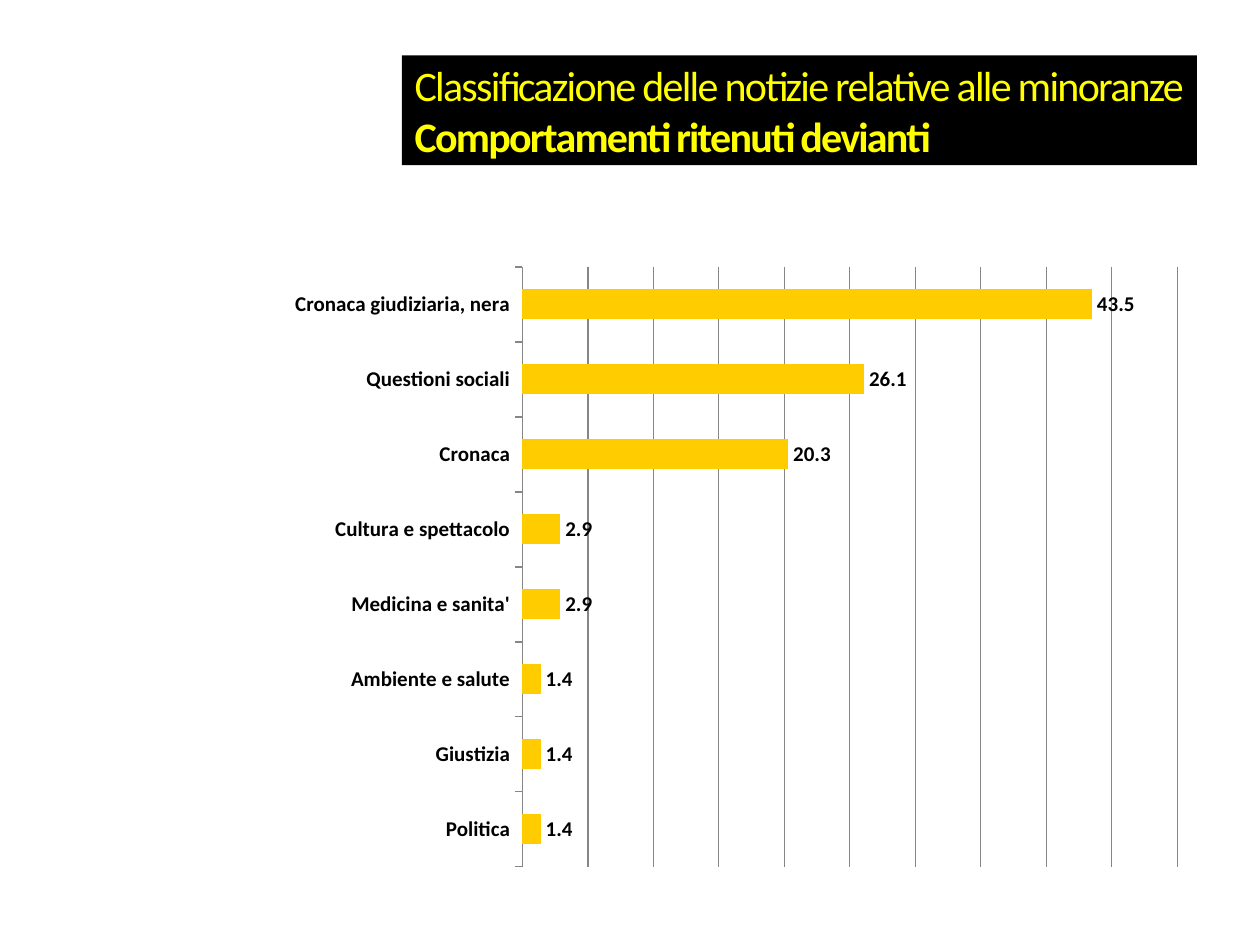
from lxml import etree
from pptx import Presentation
from pptx.chart.data import CategoryChartData
from pptx.dml.color import RGBColor
from pptx.enum.chart import XL_CHART_TYPE, XL_LABEL_POSITION, XL_TICK_LABEL_POSITION, XL_TICK_MARK
from pptx.enum.text import MSO_ANCHOR, PP_ALIGN
from pptx.oxml.ns import qn
from pptx.util import Inches, Pt

BAR = XL_CHART_TYPE.BAR_CLUSTERED
END = XL_LABEL_POSITION.OUTSIDE_END
LOW = XL_TICK_LABEL_POSITION.LOW
OUT, NONE = XL_TICK_MARK.OUTSIDE, XL_TICK_MARK.NONE
MIDDLE, LEFT = MSO_ANCHOR.MIDDLE, PP_ALIGN.LEFT


def color(code):
    return RGBColor.from_string(code)


class Deck:
    face = "Calibri"
    ink, gold, yellow, grid = "000000", "FFCC00", "FFFF00", "868686"

    def __init__(self):
        self.prs = Presentation()
        self.prs.slide_width, self.prs.slide_height = Inches(10), Inches(7.5)
        self.slide = self.prs.slides.add_slide(self.prs.slide_layouts[5])

    def font(self, font, size, code, bold=None):
        font.name, font.size, font.bold = self.face, Pt(size), bold
        font.color.rgb = color(code)

    def title(self, box, top, main):
        shape = self.slide.shapes.title
        shape.left, shape.top, shape.width, shape.height = map(Inches, box)
        shape.fill.solid()
        shape.fill.fore_color.rgb = color(self.ink)
        frame = shape.text_frame
        frame.word_wrap = True
        frame.vertical_anchor = MIDDLE
        frame.margin_right = Inches(0.05)
        para = frame.paragraphs[0]
        para.alignment = LEFT
        for text, bold in ((top, False), (main, True)):
            if para.runs:
                para.add_line_break()
            run = para.add_run()
            run.text = text
            run.font.bold = bold
            run.font._element.set("spc", "-100")
        self.font(para.font, 24, self.yellow)

    def place(self, chart, area):
        plot = chart._chartSpace.find(".//" + qn("c:plotArea"))
        old = plot.find(qn("c:layout"))
        if old is not None:
            plot.remove(old)
        layout = etree.Element(qn("c:layout"))
        plot.insert(0, layout)
        manual = etree.SubElement(layout, qn("c:manualLayout"))
        items = [("layoutTarget", "inner"), ("xMode", "edge"), ("yMode", "edge")]
        for tag, val in items + list(zip("xywh", area)):
            etree.SubElement(manual, qn("c:" + tag)).set("val", str(val))

    def bars(self, box, rows, area):
        data = CategoryChartData(number_format="0.0")
        data.categories = [name for name, _ in rows]
        data.add_series("Series 1", [val for _, val in rows])
        chart = self.slide.shapes.add_chart(BAR, *map(Inches, box), data).chart
        chart.has_legend = chart.has_title = False
        self.font(chart.font, 10, self.ink)
        self.place(chart, area)

        cats = chart.category_axis
        cats.reverse_order = True
        cats.major_tick_mark, cats.minor_tick_mark = OUT, NONE
        cats.tick_label_position = LOW
        self.font(cats.tick_labels.font, 12, self.ink, True)

        vals = chart.value_axis
        vals.visible = False
        vals.minimum_scale, vals.maximum_scale, vals.major_unit = 0, 50, 5
        vals.has_major_gridlines = True
        for line in (cats.format.line, vals.major_gridlines.format.line):
            line.color.rgb = color(self.grid)
            line.width = Pt(0.75)

        plot = chart.plots[0]
        plot.gap_width = 150
        plot.vary_by_categories = False
        fill = plot.series[0].format.fill
        fill.solid()
        fill.fore_color.rgb = color(self.gold)
        labels = plot.series[0].data_labels
        labels.show_value = True
        labels.number_format, labels.number_format_is_linked = "0.0", False
        labels.position = END
        self.font(labels.font, 12, self.ink, True)


def main():
    deck = Deck()
    deck.title((3.19, 0.44, 6.31, 0.87),
               "Classificazione delle notizie relative alle minoranze",
               "Comportamenti ritenuti devianti")
    rows = [
        ("Cronaca giudiziaria, nera", 43.5),
        ("Questioni sociali", 26.1),
        ("Cronaca", 20.3),
        ("Cultura e spettacolo", 2.9),
        ("Medicina e sanita'", 2.9),
        ("Ambiente e salute", 1.4),
        ("Giustizia", 1.4),
        ("Politica", 1.4),
    ]
    deck.bars((2.17, 2.02, 7.32, 4.96), rows, (0.27, 0.02, 0.71, 0.96))
    deck.prs.save("out.pptx")


if __name__ == "__main__":
    main()
